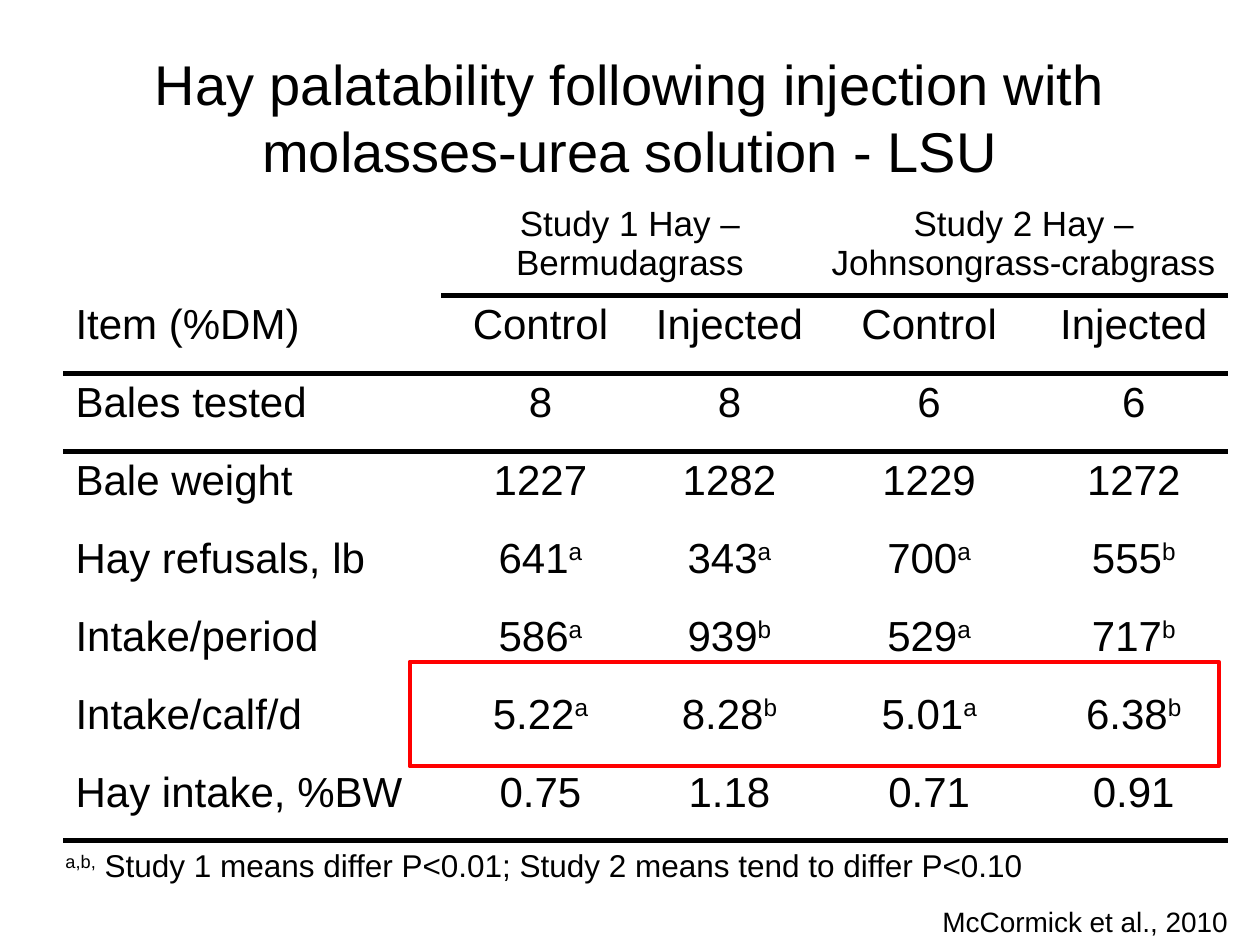
import pptx
import pptx.util
import pptx.dml.color
import pptx.enum.shapes
import pptx.enum.text
import pptx.oxml
import pptx.oxml.ns

Cm, Pt = pptx.util.Cm, pptx.util.Pt
Align = pptx.enum.text.PP_ALIGN
Anchor = pptx.enum.text.MSO_ANCHOR

# Content: text after ^ is raised
TITLE = "Hay palatability following injection with molasses-urea solution - LSU"
GROUPS = {1: "Study 1 Hay – Bermudagrass", 3: "Study 2 Hay – Johnsongrass-crabgrass"}
ROWS = [
    ["Item (%DM)", "Control", "Injected", "Control", "Injected"],
    ["Bales tested", "8", "8", "6", "6"],
    ["Bale weight", "1227", "1282", "1229", "1272"],
    ["Hay refusals, lb", "641^a", "343^a", "700^a", "555^b"],
    ["Intake/period", "586^a", "939^b", "529^a", "717^b"],
    ["Intake/calf/d", "5.22^a", "8.28^b", "5.01^a", "6.38^b"],
    ["Hay intake, %BW", "0.75", "1.18", "0.71", "0.91"],
]
NOTE = "^a,b,^ Study 1 means differ P<0.01; Study 2 means tend to differ P<0.10"
CREDIT = "McCormick et al., 2010"
COLORS = {"ink": "000000", "mark": "FF0000"}
WIDTHS = [7.62, 4.01, 3.61, 4.44, 3.81]
ROW_H = 1.57
PLAIN = "{2D5ABB26-0587-4C30-8999-92F81FD0307C}"


def color(name):
    return pptx.dml.color.RGBColor.from_string(COLORS[name])


def write(frame, text, size, align=Align.LEFT):
    para = frame.paragraphs[0]
    para.alignment = align
    for i, part in enumerate(text.split("^")):
        if not part:
            continue
        run = para.add_run()
        run.text = part
        run.font.name = "Arial"
        run.font.size = Pt(size)
        run.font.color.rgb = color("ink")
        if i % 2:
            run.font._element.set("baseline", "30000")


def add_text(slide, box, text, size, align=Align.LEFT, wrap=False):
    frame = slide.shapes.add_textbox(*map(Cm, box)).text_frame
    frame.word_wrap = wrap
    frame.vertical_anchor = Anchor.MIDDLE if wrap else Anchor.TOP
    write(frame, text, size, align)


def rule(cell, sides):
    props = cell._tc.get_or_add_tcPr()
    for i, side in enumerate(sides):
        line = pptx.oxml.parse_xml(
            f'<a:ln{side} {pptx.oxml.ns.nsdecls("a")} w="{Pt(3)}"><a:solidFill>'
            f'<a:srgbClr val="{COLORS["ink"]}"/></a:solidFill></a:ln{side}>')
        props.insert(i, line)


def add_grid(slide):
    count = len(ROWS) + 1
    grid = slide.shapes.add_table(
        count, len(WIDTHS), Cm(1.27), Cm(4.01),
        Cm(sum(WIDTHS)), Cm(ROW_H * count)).table
    grid.first_row = grid.horz_banding = False
    grid._tbl.tblPr.find(pptx.oxml.ns.qn("a:tableStyleId")).text = PLAIN
    for col, width in zip(grid.columns, WIDTHS):
        col.width = Cm(width)
    for row in grid.rows:
        row.height = Cm(ROW_H)

    # Study headings, each over two columns
    for c, text in GROUPS.items():
        grid.cell(0, c).merge(grid.cell(0, c + 1))
        write(grid.cell(0, c).text_frame, text, 20, Align.CENTER)

    # Body
    for r, row in enumerate(ROWS, 1):
        for c, text in enumerate(row):
            write(grid.cell(r, c).text_frame, text, 24,
                  Align.CENTER if c else Align.LEFT)

    # Rules under the headings, the column names and the last row
    sides = {0: "B", 1: "TB", 2: "T", count - 1: "B"}
    for r in range(count):
        for c in range(len(WIDTHS)):
            cell = grid.cell(r, c)
            cell.fill.background()
            edge = sides.get(r, "")
            if c == 0 and r < 2:
                edge = "B" if r else ""
            rule(cell, edge)


def main():
    deck = pptx.Presentation()
    deck.slide_width, deck.slide_height = Cm(25.4), Cm(19.05)
    slide = deck.slides.add_slide(deck.slide_layouts[6])

    add_text(slide, (1.27, 0.76, 22.86, 3.18), TITLE, 32, Align.CENTER, True)
    add_grid(slide)
    add_text(slide, (18.75, 18.11, 6.45, 0.94), CREDIT, 16)
    add_text(slide, (1.07, 16.94, 19.91, 1.02), NOTE, 18)

    # Frame around the intake per calf
    mark = slide.shapes.add_shape(
        pptx.enum.shapes.MSO_SHAPE.RECTANGLE,
        Cm(8.26), Cm(13.34), Cm(16.31), Cm(2.11))
    mark.shadow.inherit = False
    mark.fill.background()
    mark.line.color.rgb = color("mark")
    mark.line.width = Pt(2.25)

    deck.save("out.pptx")


if __name__ == "__main__":
    main()
